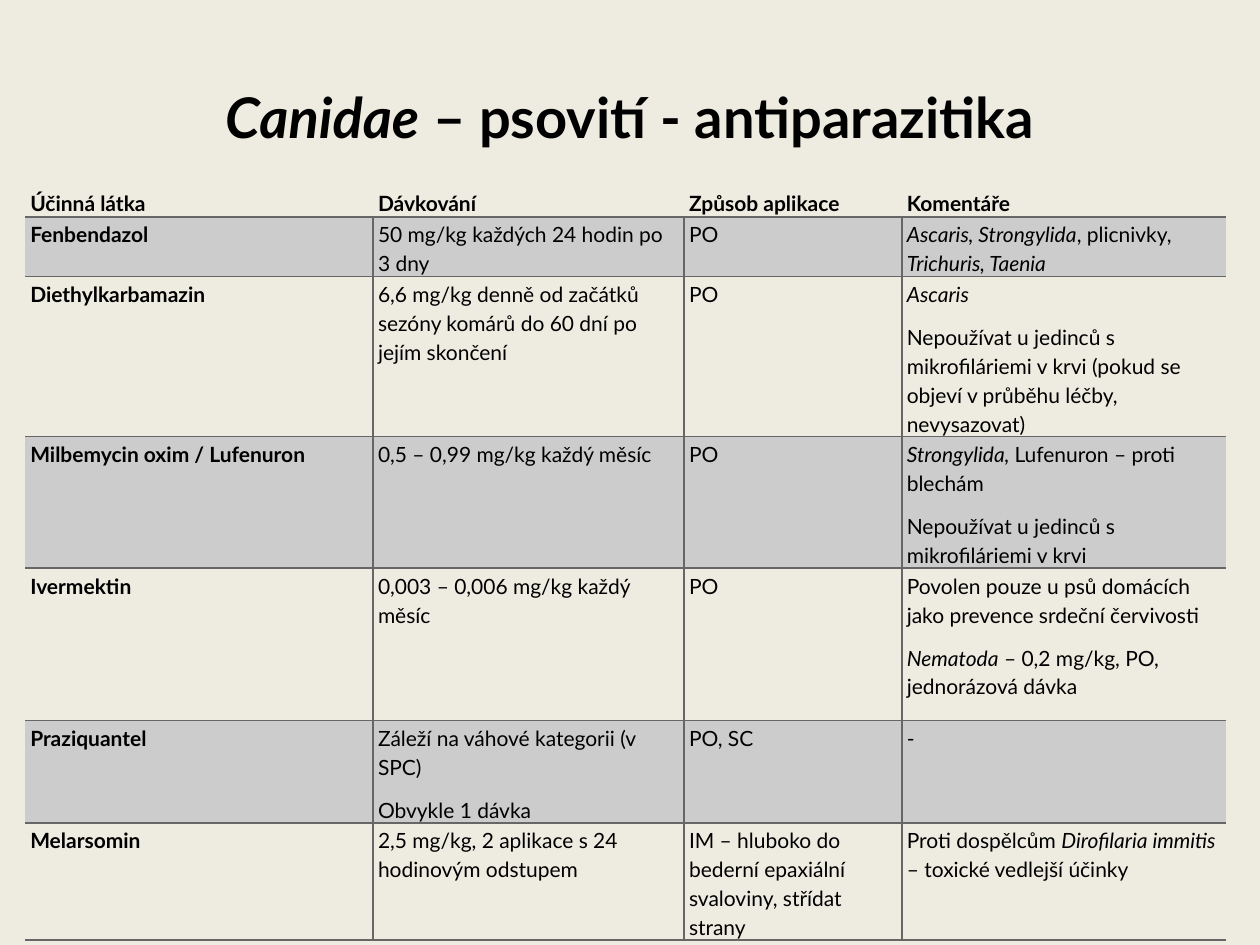
from lxml.etree import SubElement
from pptx import Presentation
from pptx.dml.color import RGBColor
from pptx.enum.text import MSO_ANCHOR, PP_ALIGN
from pptx.oxml.ns import qn
from pptx.util import Cm, Pt

BLACK = RGBColor(0x00, 0x00, 0x00)
BEIGE = RGBColor(0xEE, 0xEC, 0xE1)
GREY = RGBColor(0xCC, 0xCC, 0xCC)
RULE = RGBColor(0x66, 0x66, 0x66)
FONT = "Lato"

COLS = [7.01, 6.27, 4.39, 6.53]
ROWS = [0.64, 1.17, 3.07, 2.57, 3.07, 2.06, 2.21]
DRUGS = [
    ["Účinná látka", "Dávkování", "Způsob aplikace", "Komentáře"],
    ["Fenbendazol", "50 mg/kg každých 24 hodin po 3 dny", "PO",
     "*Ascaris, Strongylida*, plicnivky, *Trichuris, Taenia*"],
    ["Diethylkarbamazin",
     "6,6 mg/kg denně od začátků sezóny komárů do 60 dní po jejím skončení", "PO",
     "*Ascaris*\nNepoužívat u jedinců s mikrofiláriemi v krvi "
     "(pokud se objeví v průběhu léčby, nevysazovat)"],
    ["Milbemycin oxim / Lufenuron", "0,5 – 0,99 mg/kg každý měsíc", "PO",
     "*Strongylida, *Lufenuron – proti blechám\n"
     "Nepoužívat u jedinců s mikrofiláriemi v krvi"],
    ["Ivermektin", "0,003 – 0,006 mg/kg každý měsíc", "PO",
     "Povolen pouze u psů domácích jako prevence srdeční červivosti\n"
     "*Nematoda* – 0,2 mg/kg, PO, jednorázová dávka"],
    ["Praziquantel", "Záleží na váhové kategorii (v SPC)\nObvykle 1 dávka", "PO, SC", "-"],
    ["Melarsomin", "2,5 mg/kg, 2 aplikace s 24 hodinovým odstupem",
     "IM – hluboko do bederní epaxiální svaloviny, střídat strany",
     "Proti dospělcům *Dirofilaria immitis *– toxické vedlejší účinky"],
]


def add_runs(p, text, size, bold):
    """Add text to a paragraph, with the parts between asterisks in italics."""
    for i, part in enumerate(text.split("*")):
        if part:
            r = p.add_run()
            r.text = part
            r.font.name = FONT
            r.font.size = Pt(size)
            r.font.bold = bold
            r.font.italic = i % 2 == 1
            r.font.color.rgb = BLACK


def set_border(cell, side, width):
    """Draw one side of a cell, or clear it when the width is zero."""
    ln = SubElement(cell._tc.get_or_add_tcPr(), qn(f"a:ln{side}"), w=str(Pt(width)))
    if width:
        fill = SubElement(ln, qn("a:solidFill"))
        SubElement(fill, qn("a:srgbClr"), val=str(RULE))
    else:
        SubElement(ln, qn("a:noFill"))


def add_title(s, left, top, width, height):
    """Place the centred slide title in the given box."""
    tf = s.shapes.add_textbox(Cm(left), Cm(top), Cm(width), Cm(height)).text_frame
    tf.word_wrap = True
    tf.vertical_anchor = MSO_ANCHOR.MIDDLE
    p = tf.paragraphs[0]
    p.alignment = PP_ALIGN.CENTER
    add_runs(p, "*Canidae* – psovití - antiparazitika", 32, True)


def fill_cell(cell, text, row, col):
    """Write and style one cell according to its row and column."""
    cell.margin_left = cell.margin_right = Cm(0.1)
    cell.margin_top, cell.margin_bottom = Cm(0.03), Cm(0)
    tf = cell.text_frame
    for i, line in enumerate(text.split("\n")):
        p = tf.add_paragraph() if i else tf.paragraphs[0]
        p.line_spacing = 1.15
        p.space_after = Pt(8)
        add_runs(p, line, 12, row == 0 or col == 0)
    set_border(cell, "L", 1 if row and col else 0)
    set_border(cell, "R", 1 if row and col < len(COLS) - 1 else 0)
    set_border(cell, "T", (0, 1.5)[row] if row < 2 else 1)
    set_border(cell, "B", 1 if row else 1.5)
    if row % 2:
        cell.fill.solid()
        cell.fill.fore_color.rgb = GREY
    else:
        cell.fill.background()


def add_drug_table(s, left, top):
    """Place the table of antiparasitic drugs at the given corner."""
    table = s.shapes.add_table(len(ROWS), len(COLS), Cm(left), Cm(top),
                               Cm(sum(COLS)), Cm(sum(ROWS))).table
    table.horz_banding = False
    for column, width in zip(table.columns, COLS):
        column.width = Cm(width)
    for i, (height, texts) in enumerate(zip(ROWS, DRUGS)):
        table.rows[i].height = Cm(height)
        for j, text in enumerate(texts):
            fill_cell(table.cell(i, j), text, i, j)


def main():
    """Build and save the slide."""
    prs = Presentation()
    prs.slide_width, prs.slide_height = Cm(25.4), Cm(19.05)
    s = prs.slides.add_slide(prs.slide_layouts[6])
    s.background.fill.solid()
    s.background.fill.fore_color.rgb = BEIGE
    add_title(s, 1.27, 0.76, 22.86, 3.18)
    add_drug_table(s, 0.51, 3.73)
    prs.save("out.pptx")


if __name__ == "__main__":
    main()
